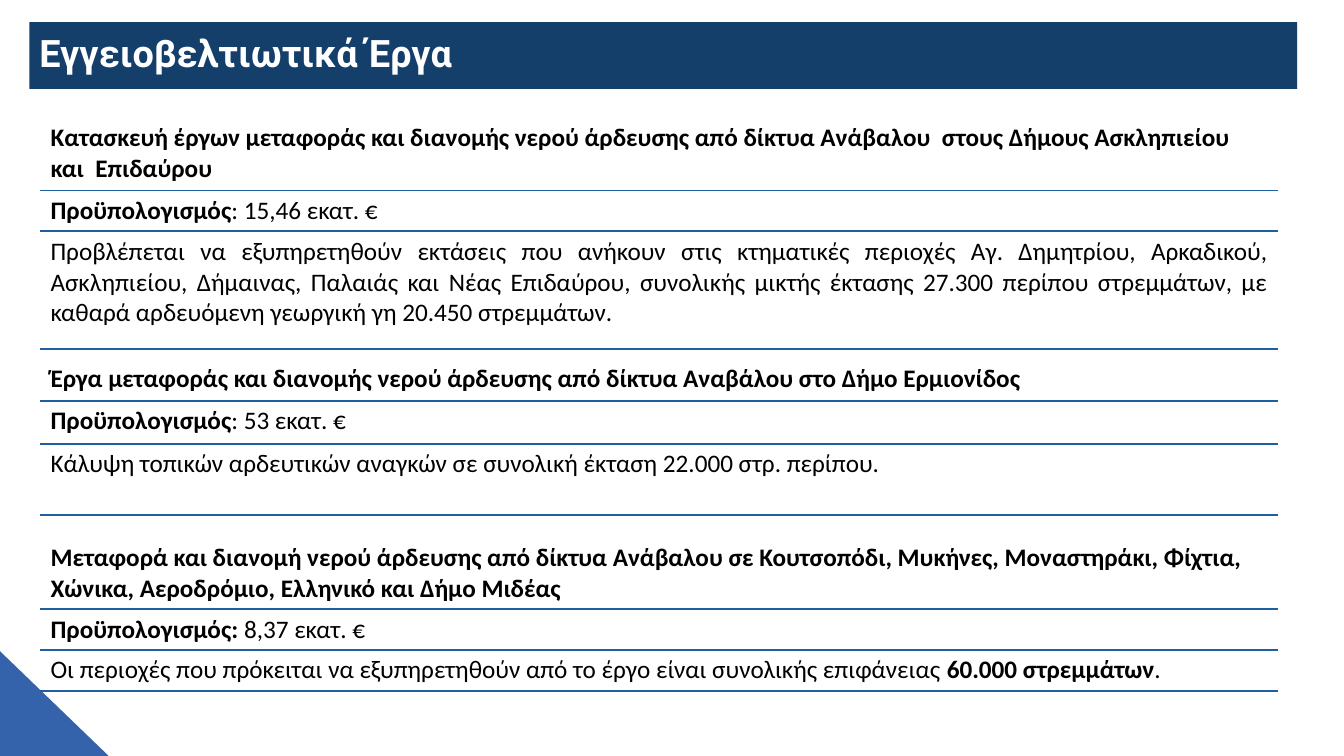
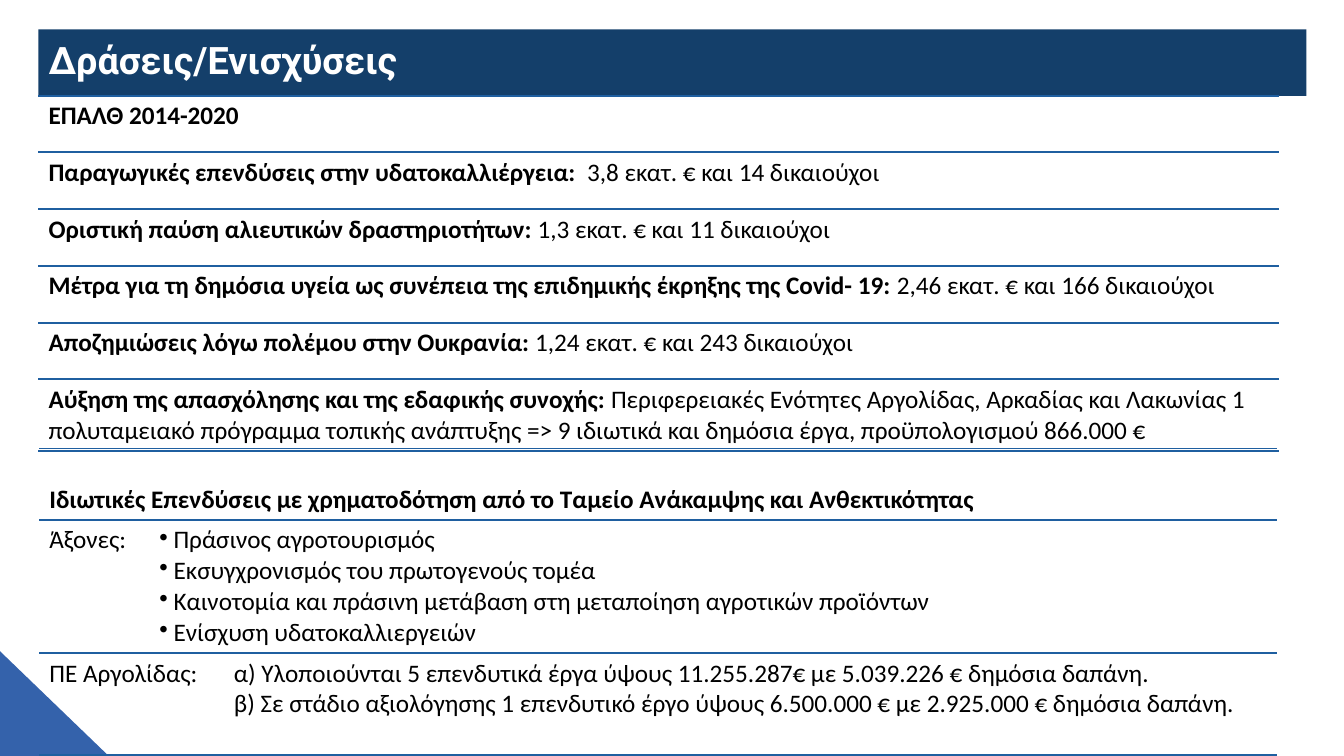
from dataclasses import dataclass
from typing import NamedTuple

from lxml.etree import SubElement
from pptx import Presentation
from pptx.dml.color import RGBColor
from pptx.enum.shapes import MSO_SHAPE
from pptx.enum.text import MSO_ANCHOR, MSO_AUTO_SIZE, PP_ALIGN
from pptx.oxml.ns import qn
from pptx.slide import Slide
from pptx.table import _Cell as Cell
from pptx.text.text import Font, _Paragraph as Paragraph
from pptx.util import Cm, Pt

SLIDE_WIDTH = 33.87
SLIDE_HEIGHT = 19.05
NAVY = "143F6A"
CORNER_BLUE = "3462AB"
RULE_BLUE = "1F5FA0"
WHITE = "FFFFFF"
BLACK = "000000"
TITLE_FONT = "Roboto"
BODY_FONT = "Calibri"
BULLET_INDENT = Cm(0.36)
RULE_WIDTH = Pt(1.5)


class TextRun(NamedTuple):
    text: str
    bold: bool = False


class CellContent(NamedTuple):
    paragraphs: list[list[TextRun]]
    span: int = 1
    justified: bool = False
    bulleted: bool = False
    anchor: MSO_ANCHOR = MSO_ANCHOR.TOP


class TableRow(NamedTuple):
    height: float
    cells: list[CellContent]


@dataclass
class RuledTable:
    left: float
    top: float
    columns: list[float]
    rows: list[TableRow]
    top_rule: bool = True


@dataclass
class Project:
    top: float
    heights: tuple[float, float, float]
    heading: str
    budget: list[TextRun]
    details: list[TextRun]


def color(value: str) -> RGBColor:
    return RGBColor.from_string(value)


def style_font(font: Font, name: str, size: float, value: str) -> None:
    font.name = name
    font.size = Pt(size)
    font.color.rgb = color(value)


def set_borders(cell: Cell, top_rule: bool) -> None:
    properties = cell._tc.get_or_add_tcPr()
    for tag, ruled in (("lnL", False), ("lnR", False), ("lnT", top_rule), ("lnB", True)):
        line = SubElement(properties, qn(f"a:{tag}"), w=str(RULE_WIDTH))
        if ruled:
            fill = SubElement(line, qn("a:solidFill"))
            SubElement(fill, qn("a:srgbClr"), val=RULE_BLUE)
        else:
            SubElement(line, qn("a:noFill"))


def add_bullet(paragraph: Paragraph) -> None:
    properties = paragraph._p.get_or_add_pPr()
    properties.set("marL", str(BULLET_INDENT))
    properties.set("indent", str(-BULLET_INDENT))
    SubElement(properties, qn("a:buChar"), char="•")


def fill_cell(cell: Cell, content: CellContent) -> None:
    cell.vertical_anchor = content.anchor
    frame = cell.text_frame
    for index, runs in enumerate(content.paragraphs):
        paragraph = frame.add_paragraph() if index else frame.paragraphs[0]
        if content.bulleted:
            add_bullet(paragraph)
        if content.justified:
            paragraph.alignment = PP_ALIGN.JUSTIFY
        style_font(paragraph.font, BODY_FONT, 18, BLACK)
        for text, bold in runs:
            run = paragraph.add_run()
            run.text = text
            run.font.bold = bold


def add_ruled_table(slide: Slide, spec: RuledTable) -> None:
    width = sum(spec.columns)
    height = sum(row.height for row in spec.rows)
    frame = slide.shapes.add_table(
        len(spec.rows), len(spec.columns), Cm(spec.left), Cm(spec.top), Cm(width), Cm(height)
    )
    table = frame.table
    table.first_row = False
    table.horz_banding = False
    for column, column_width in zip(table.columns, spec.columns):
        column.width = Cm(column_width)
    for row_index, row in enumerate(spec.rows):
        table.rows[row_index].height = Cm(row.height)
        for cell in table.rows[row_index].cells:
            set_borders(cell, row_index > 0 or spec.top_rule)
            cell.fill.background()
        column_index = 0
        for content in row.cells:
            cell = table.cell(row_index, column_index)
            column_index += content.span
            if content.span > 1:
                cell.merge(table.cell(row_index, column_index - 1))
            fill_cell(cell, content)


def add_titled_slide(presentation: Presentation, text: str, left: float, top: float) -> Slide:
    slide = presentation.slides.add_slide(presentation.slide_layouts[5])
    title = slide.shapes.title
    title.left, title.top, title.width, title.height = Cm(left), Cm(top), Cm(31.95), Cm(1.68)
    title.fill.solid()
    title.fill.fore_color.rgb = color(NAVY)
    frame = title.text_frame
    frame.text = text
    frame.auto_size = MSO_AUTO_SIZE.NONE
    frame.vertical_anchor = MSO_ANCHOR.MIDDLE
    paragraph = frame.paragraphs[0]
    paragraph.alignment = PP_ALIGN.LEFT
    paragraph.line_spacing = 0.9
    style_font(paragraph.font, TITLE_FONT, 27, WHITE)
    paragraph.font.bold = True

    corner_width, corner_height = 2.74, 2.64
    corner = slide.shapes.add_shape(
        MSO_SHAPE.RIGHT_TRIANGLE,
        Cm(0), Cm(SLIDE_HEIGHT - corner_height), Cm(corner_width), Cm(corner_height),
    )
    corner.shadow.inherit = False
    corner.fill.solid()
    corner.fill.fore_color.rgb = color(CORNER_BLUE)
    corner.line.fill.background()
    return slide


def project_table(project: Project) -> RuledTable:
    contents = [
        CellContent([[TextRun(project.heading, True)]]),
        CellContent([project.budget]),
        CellContent([project.details], justified=True),
    ]
    rows = [TableRow(height, [content]) for height, content in zip(project.heights, contents)]
    return RuledTable(1.02, project.top, [31.19], rows, top_rule=False)


PROJECTS = [
    Project(
        2.97, (1.83, 1.03, 2.97),
        "Κατασκευή έργων μεταφοράς και διανομής νερού άρδευσης από δίκτυα Ανάβαλου  "
        "στους Δήμους Ασκληπιείου και  Επιδαύρου",
        [TextRun("Προϋπολογισμός", True), TextRun(": 15,46 εκατ. €")],
        [TextRun(
            "Προβλέπεται να εξυπηρετηθούν εκτάσεις που ανήκουν στις κτηματικές περιοχές "
            "Αγ. Δημητρίου, Αρκαδικού, Ασκληπιείου, Δήμαινας, Παλαιάς και Νέας Επιδαύρου, "
            "συνολικής μικτής έκτασης 27.300 περίπου στρεμμάτων, με καθαρά αρδευόμενη "
            "γεωργική γη 20.450 στρεμμάτων."
        )],
    ),
    Project(
        9.02, (1.08, 1.08, 1.8),
        "Έργα μεταφοράς και διανομής νερού άρδευσης από δίκτυα Αναβάλου στο Δήμο Ερμιονίδος",
        [TextRun("Προϋπολογισμός", True), TextRun(": 53 εκατ. €")],
        [TextRun("Kάλυψη τοπικών αρδευτικών αναγκών σε συνολική έκταση 22.000 στρ. περίπου.")],
    ),
    Project(
        13.54, (1.8, 1.03, 1.03),
        "Μεταφορά και διανομή νερού άρδευσης από δίκτυα Ανάβαλου σε Κουτσοπόδι, Μυκήνες, "
        "Μοναστηράκι, Φίχτια, Χώνικα, Αεροδρόμιο, Ελληνικό και Δήμο Μιδέας",
        [TextRun("Προϋπολογισμός: ", True), TextRun("8,37 εκατ. €")],
        [
            TextRun("Οι περιοχές που πρόκειται να εξυπηρετηθούν από το έργο είναι "
                    "συνολικής επιφάνειας "),
            TextRun("60.000 στρεμμάτων", True),
            TextRun("."),
        ],
    ),
]

FISHERIES_MEASURES = [
    ("ΕΠΑΛΘ 2014-2020", ""),
    ("Παραγωγικές επενδύσεις στην υδατοκαλλιέργεια:  ", "3,8 εκατ. € και 14 δικαιούχοι"),
    ("Οριστική παύση αλιευτικών δραστηριοτήτων: ", "1,3 εκατ. € και 11 δικαιούχοι"),
    ("Μέτρα για τη δημόσια υγεία ως συνέπεια της επιδημικής έκρηξης της Covid- 19: ",
     "2,46 εκατ. € και 166 δικαιούχοι"),
    ("Αποζημιώσεις λόγω πολέμου στην Ουκρανία: ", "1,24 εκατ. € και 243 δικαιούχοι"),
    ("Αύξηση της απασχόλησης και της εδαφικής συνοχής: ",
     "Περιφερειακές Ενότητες Αργολίδας, Αρκαδίας και Λακωνίας 1 πολυταμειακό πρόγραμμα "
     "τοπικής ανάπτυξης => 9 ιδιωτικά και δημόσια έργα, προϋπολογισμού 866.000 €"),
]

RECOVERY_HEADING = (
    "Ιδιωτικές Επενδύσεις με χρηματοδότηση από το Ταμείο Ανάκαμψης και Ανθεκτικότητας"
)
RECOVERY_AXES = [
    "Πράσινος αγροτουρισμός",
    "Εκσυγχρονισμός του πρωτογενούς τομέα",
    "Καινοτομία και πράσινη μετάβαση στη μεταποίηση αγροτικών προϊόντων",
    "Ενίσχυση υδατοκαλλιεργειών",
]
RECOVERY_PROJECTS = [
    "α) Υλοποιούνται 5 επενδυτικά έργα ύψους 11.255.287€ με 5.039.226 € δημόσια δαπάνη.",
    "β) Σε στάδιο αξιολόγησης 1 επενδυτικό έργο ύψους 6.500.000 € με 2.925.000 € δημόσια δαπάνη.",
]


def plain(texts: list[str]) -> list[list[TextRun]]:
    return [[TextRun(text)] for text in texts]


def fisheries_table() -> RuledTable:
    rows = []
    for label, result in FISHERIES_MEASURES:
        runs = [TextRun(label, True)]
        if result:
            runs.append(TextRun(result))
        rows.append(TableRow(1.43, [CellContent([runs])]))
    rows[-1] = rows[-1]._replace(height=1.8)
    return RuledTable(0.97, 2.41, [31.27], rows)


def recovery_table() -> RuledTable:
    heading = CellContent([[TextRun(RECOVERY_HEADING, True)]], 3, True, anchor=MSO_ANCHOR.BOTTOM)
    rows = [
        TableRow(1.8, [heading]),
        TableRow(3.35, [
            CellContent(plain(["Άξονες:"]), justified=True),
            CellContent(plain(RECOVERY_AXES), 2, True, bulleted=True),
        ]),
        TableRow(2.57, [
            CellContent(plain(["ΠΕ Αργολίδας:"]), 2, True),
            CellContent(plain(RECOVERY_PROJECTS), justified=True),
        ]),
    ]
    return RuledTable(0.99, 11.3, [2.77, 1.88, 26.54], rows)


def main() -> None:
    presentation = Presentation()
    presentation.slide_width = Cm(SLIDE_WIDTH)
    presentation.slide_height = Cm(SLIDE_HEIGHT)

    irrigation_slide = add_titled_slide(presentation, "Εγγειοβελτιωτικά Έργα", 0.74, 0.56)
    for project in PROJECTS:
        add_ruled_table(irrigation_slide, project_table(project))

    support_slide = add_titled_slide(presentation, "Δράσεις/Ενισχύσεις", 0.97, 0.74)
    for table in (fisheries_table(), recovery_table()):
        add_ruled_table(support_slide, table)

    presentation.save("out.pptx")


if __name__ == "__main__":
    main()
